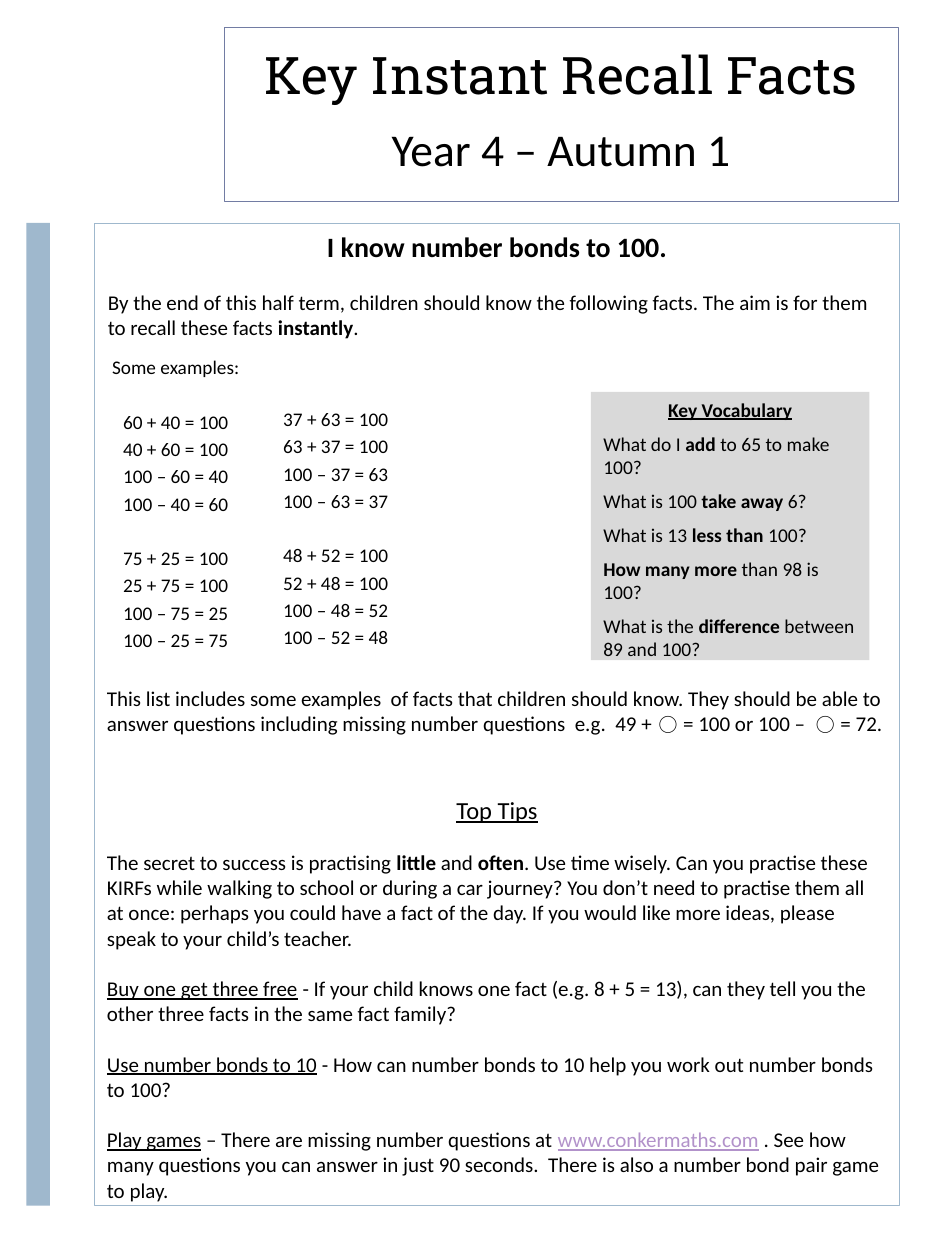
"""Build a one-page sheet of key number facts for Year 4."""
from dataclasses import dataclass

from pptx import Presentation
from pptx.dml.color import RGBColor
from pptx.enum.shapes import MSO_SHAPE
from pptx.enum.text import MSO_ANCHOR, MSO_AUTO_SIZE, PP_ALIGN
from pptx.util import Inches, Pt

WIDTH, HEIGHT = Inches(7.5), Inches(10)
BLACK, BLUE, SLATE, GREY, LILAC = "000000", "9FB8CD", "727CA3", "D9D9D9", "B292CA"
BODY_FONT, TITLE_FONT = "Calibri", "Roboto Slab"
PLAIN_TABLE_STYLE = "{2D5ABB26-0587-4C30-8999-92F81FD0307C}"
LINE_GAP = 14.4
FACT_GAP = 15.5


@dataclass(frozen=True)
class Area:
    """A rectangle in percent of the slide's width and height."""
    left: float
    top: float
    width: float
    height: float

    def lengths(self) -> tuple[int, int, int, int]:
        return (int(WIDTH * self.left / 100), int(HEIGHT * self.top / 100),
                int(WIDTH * self.width / 100), int(HEIGHT * self.height / 100))


@dataclass(frozen=True)
class Span:
    """A stretch of text with its own emphasis."""
    text: str
    bold: bool = False
    underline: bool = False
    color: str = BLACK


@dataclass(frozen=True)
class Line:
    """A paragraph made of spans."""
    spans: tuple[Span, ...]
    size: float = 12
    before: float = 0
    centred: bool = False
    font: str = BODY_FONT
    spacing: float = 1.0


@dataclass(frozen=True)
class Panel:
    """A plain rectangle."""
    area: Area
    fill: str | None = None
    line: str | None = None


@dataclass(frozen=True)
class TextBlock:
    """A text box and its paragraphs."""
    area: Area
    lines: tuple[Line, ...]


def color_of(value: str) -> RGBColor:
    return RGBColor.from_string(value)


def write_lines(frame, lines: tuple[Line, ...]) -> None:
    for index, line in enumerate(lines):
        paragraph = frame.paragraphs[0] if index == 0 else frame.add_paragraph()
        paragraph.alignment = PP_ALIGN.CENTER if line.centred else PP_ALIGN.LEFT
        paragraph.space_before = Pt(line.before)
        paragraph.line_spacing = line.spacing
        paragraph.font.name = line.font
        paragraph.font.size = Pt(line.size)
        for span in line.spans:
            run = paragraph.add_run()
            run.text = span.text
            run.font.bold = span.bold
            run.font.underline = span.underline
            run.font.color.rgb = color_of(span.color)


def fill_frame(frame, lines: tuple[Line, ...]) -> None:
    frame.word_wrap = True
    frame.auto_size = MSO_AUTO_SIZE.NONE
    frame.vertical_anchor = MSO_ANCHOR.TOP
    write_lines(frame, lines)


def draw_panel(slide, panel: Panel):
    shape = slide.shapes.add_shape(MSO_SHAPE.RECTANGLE, *panel.area.lengths())
    shape.shadow.inherit = False
    if panel.fill:
        shape.fill.solid()
        shape.fill.fore_color.rgb = color_of(panel.fill)
    else:
        shape.fill.background()
    if panel.line:
        shape.line.color.rgb = color_of(panel.line)
        shape.line.width = Pt(0.5)
    else:
        shape.line.fill.background()
    return shape


def draw_title(slide, area: Area, line: Line) -> None:
    title = slide.shapes.title
    title.left, title.top, title.width, title.height = area.lengths()
    fill_frame(title.text_frame, (line,))


def draw_text(slide, block: TextBlock) -> None:
    box = slide.shapes.add_textbox(*block.area.lengths())
    fill_frame(box.text_frame, block.lines)


def fact_lines(facts: list[str], heading: str = "") -> tuple[Line, ...]:
    """Set facts in groups of four, with an optional heading above."""
    texts = ([heading] if heading else []) + facts
    offset = len(texts) - len(facts)
    return tuple(
        Line((Span(text),), 11, FACT_GAP if index and (index - offset) % 4 == 0 else 0,
             True, spacing=1.15)
        for index, text in enumerate(texts))


def bond_facts(*pairs: tuple[int, int]) -> list[str]:
    """List the four facts in the family of each pair."""
    return [fact for a, b in pairs for fact in (
        f"{a} + {b} = 100", f"{b} + {a} = 100", f"100 – {a} = {b}", f"100 – {b} = {a}")]


def draw_examples(slide, area: Area) -> None:
    table = slide.shapes.add_table(1, 2, *area.lengths()).table
    table.first_row = table.horz_banding = False
    table._tbl.tblPr[0].text = PLAIN_TABLE_STYLE
    columns = (fact_lines(bond_facts((60, 40), (75, 25)), "Some examples:"),
               fact_lines(bond_facts((37, 63), (48, 52))))
    for cell, lines, top in zip(table.rows[0].cells, columns, (0, 0.41)):
        cell.fill.background()
        cell.margin_left = cell.margin_right = Inches(0.07)
        cell.margin_top, cell.margin_bottom = Inches(top), 0
        write_lines(cell.text_frame, lines)


def question(*spans: Span) -> Line:
    return Line(spans, 11.1, 6)


def tip(*spans: Span) -> Line:
    return Line(spans, before=LINE_GAP)


PANELS = (
    Panel(Area(23.73, 2.2, 71.33, 13.8), line=SLATE),
    Panel(Area(10, 17.7, 85.2, 78), line=BLUE),
    Panel(Area(2.8, 17.7, 2.5, 78), fill=BLUE),
)
VOCABULARY = (
    Line((Span("Key Vocabulary", True, True),), 11.1, centred=True),
    question(Span("What do I "), Span("add ", True), Span("to 65 to make 100?")),
    question(Span("What is 100 "), Span("take away ", True), Span("6?")),
    question(Span("What is 13 "), Span("less than ", True), Span("100?")),
    question(Span("How many more ", True), Span("than 98 is 100?")),
    question(Span("What is the "), Span("difference", True), Span(" between 89 and 100?")),
)
TIPS = (
    Line((Span("Top Tips", underline=True),), 14, centred=True),
    tip(Span("The secret to success is practising "), Span("little", True), Span(" and "),
        Span("often", True),
        Span(". Use time wisely. Can you practise these KIRFs while walking to school or during "
             "a car journey? You don’t need to practise them all at once: perhaps you could have "
             "a fact of the day. If you would like more ideas, please speak to your child’s "
             "teacher.")),
    tip(Span("Buy one get three free", underline=True),
        Span(" - If your child knows one fact (e.g. 8 + 5 = 13), can they tell you the other "
             "three facts in the same fact family?")),
    tip(Span("Use number bonds to 10", underline=True),
        Span(" - How can number bonds to 10 help you work out number bonds to 100?")),
    tip(Span("Play games", underline=True), Span(" – There are missing number questions at "),
        Span("www.conkermaths.com", underline=True, color=LILAC),
        Span(" . See how many questions you can answer in just 90 seconds.  There is also a "
             "number bond pair game to play.")),
)
BLOCKS = (
    TextBlock(Area(10.1, 22.5, 85.2, 8.1), (Line((
        Span("By the end of this half term, children should know the following facts. The aim "
             "is for them to recall these facts "), Span("instantly", True), Span("."))),)),
    TextBlock(Area(23.73, 9.1, 71.33, 6.9),
              (Line((Span("Year 4 – Autumn 1"),), 26, centred=True),)),
    TextBlock(Area(10, 17.7, 85.2, 5.5),
              (Line((Span("I know number bonds to 100.", True),), 16, centred=True),)),
    TextBlock(Area(10, 62.6, 85.2, 33.1), TIPS),
    TextBlock(Area(10, 53.9, 85.2, 6.7), (Line((
        Span("This list includes some examples  of facts that children should know. They should "
             "be able to answer questions including missing number questions  e.g.  49 + ⃝ = 100 "
             "or 100 –  ⃝ = 72."),)),)),
)


def main() -> None:
    presentation = Presentation()
    presentation.slide_width, presentation.slide_height = WIDTH, HEIGHT
    slide = presentation.slides.add_slide(presentation.slide_layouts[5])
    for panel in PANELS:
        draw_panel(slide, panel)
    draw_title(slide, Area(23.73, 2.9, 71.33, 5.9),
               Line((Span("Key Instant Recall Facts"),), 29.6, centred=True, font=TITLE_FONT))
    for block in BLOCKS:
        draw_text(slide, block)
    vocabulary = draw_panel(slide, Panel(Area(62.53, 31.1, 29.47, 21.3), fill=GREY))
    fill_frame(vocabulary.text_frame, VOCABULARY)
    draw_examples(slide, Area(10.13, 28, 33.87, 23.1))
    presentation.save("out.pptx")


if __name__ == "__main__":
    main()
